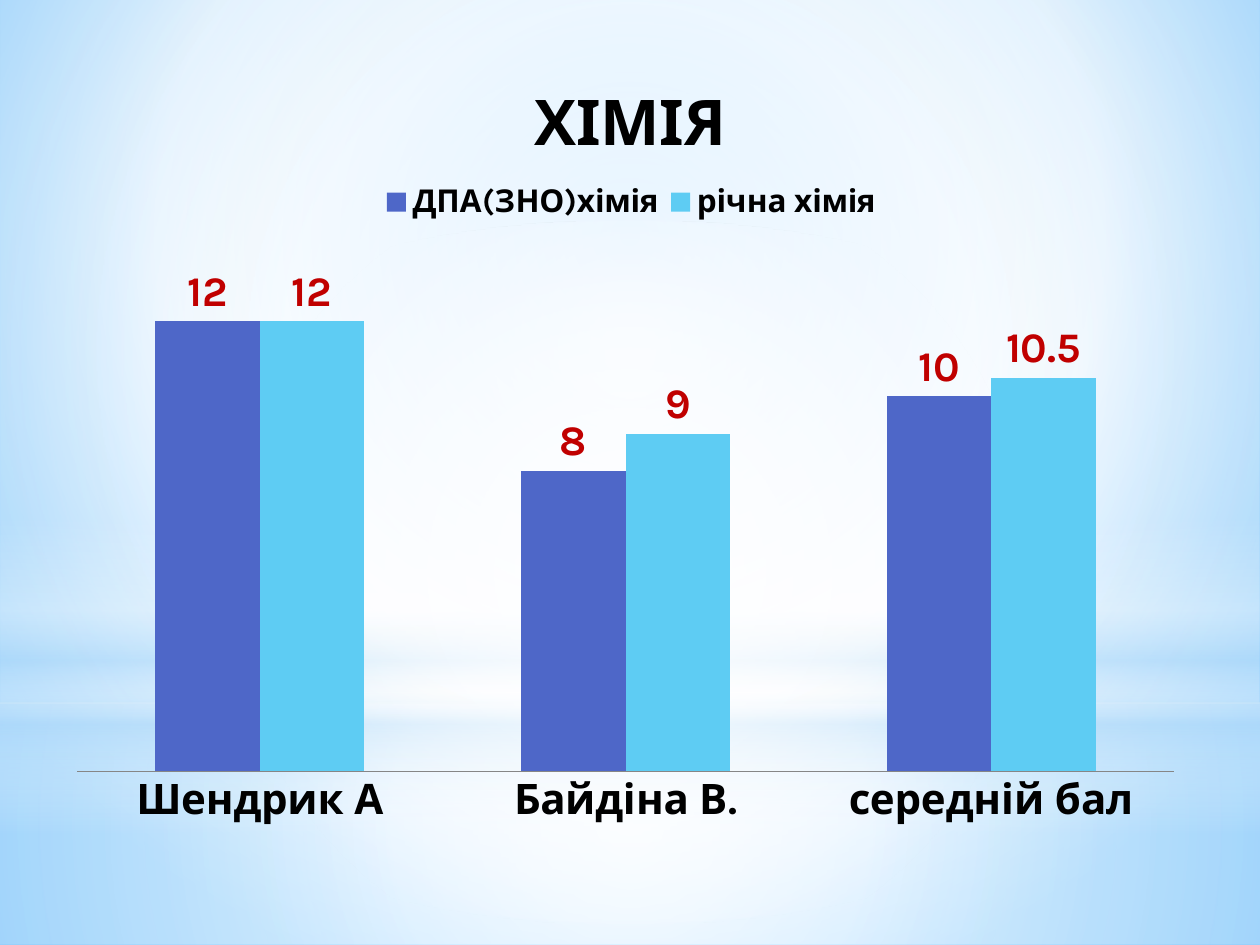
from lxml import etree
from pptx import Presentation
from pptx.chart.data import CategoryChartData
from pptx.dml.color import RGBColor
from pptx.enum import chart as kinds, shapes
from pptx.oxml import parse_xml
from pptx.oxml.ns import nsdecls, qn
from pptx.util import Inches, Pt

BLACK = RGBColor(0, 0, 0)
GRAY = RGBColor(0x86, 0x86, 0x86)
RED = RGBColor(0xC0, 0, 0)
BLUE = RGBColor(0x4E, 0x67, 0xC8)
CYAN = RGBColor(0x5E, 0xCC, 0xF3)
WHITE = RGBColor(255, 255, 255)
PALE = RGBColor(0xB4, 0xDC, 0xFA)
SKY = RGBColor(0x9E, 0xD5, 0xFF)
DEEP = RGBColor(0x5B, 0xB9, 0xFF)
FONT = "Karla"


def shade(node, stops, rect):
    marks = "".join(
        f'<a:gs pos="{pos * 1000}"><a:srgbClr val="{color}">'
        f'<a:alpha val="{alpha * 1000}"/></a:srgbClr></a:gs>'
        for pos, color, alpha in stops)
    if rect:
        sides = " ".join(f'{k}="{v * 1000}"' for k, v in zip("ltrb", rect))
        way = f'<a:path path="circle"><a:fillToRect {sides}/></a:path>'
    else:
        way = '<a:lin ang="5400000" scaled="0"/>'
    old = node.xpath(".//a:solidFill")[0]
    old.getparent().replace(old, parse_xml(
        f'<a:gradFill {nsdecls("a")} rotWithShape="1">'
        f"<a:gsLst>{marks}</a:gsLst>{way}</a:gradFill>"))


def place(node, spot, **vals):
    for old in node.findall(qn("c:layout")):
        node.remove(old)
    box = etree.Element(qn("c:layout"))
    form = etree.SubElement(box, qn("c:manualLayout"))
    for tag, val in vals.items():
        etree.SubElement(form, qn("c:" + tag)).set("val", str(val))
    node.insert(spot, box)


deck = Presentation()
deck.slide_width, deck.slide_height = Inches(10), Inches(7.5)
slide = deck.slides.add_slide(deck.slide_layouts[6])
slide.background.fill.solid()
shade(slide.background._cSld.bg,
      [(0, SKY, 100), (60, WHITE, 100), (100, DEEP, 100)], (20, 10, 20, 60))

RECT, OVAL = shapes.MSO_SHAPE.RECTANGLE, shapes.MSO_SHAPE.OVAL
MID = (50, 50, 50, 50)
glows = [
    (RECT, 5.58, 1.92, MID, [(0, WHITE, 91), (37, WHITE, 76), (100, PALE, 79)]),
    (RECT, 0, 5.58, MID, [(0, WHITE, 89), (48, WHITE, 62), (100, PALE, 79)]),
    (RECT, 4.12, 2.5, None, [(0, WHITE, 0), (29, WHITE, 30), (45, PALE, 40),
                             (55, WHITE, 26), (65, PALE, 60), (100, WHITE, 0)]),
    (OVAL, 1.75, 5.58, MID, [(0, WHITE, 100), (56, WHITE, 0)]),
]
for kind, top, high, rect, stops in glows:
    glow = slide.shapes.add_shape(kind, 0, Inches(top), Inches(10), Inches(high))
    glow.shadow.inherit = False
    glow.line.fill.background()
    glow.fill.solid()
    shade(glow._element.spPr, stops, rect)

data = CategoryChartData()
data.categories = ["Шендрик А", "Байдіна В.", "середній бал"]
data.add_series("ДПА(ЗНО)хімія", (12, 8, 10))
data.add_series("річна хімія", (12, 9, 10.5))
chart = slide.shapes.add_chart(
    kinds.XL_CHART_TYPE.COLUMN_CLUSTERED, Inches(0.43), Inches(0.29),
    Inches(9.07), Inches(6.41), data).chart

chart.has_title = chart.has_legend = True
run = chart.chart_title.text_frame.paragraphs[0].add_run()
run.text = "ХІМІЯ"
chart.legend.position = kinds.XL_LEGEND_POSITION.TOP
chart.legend.include_in_layout = False

base, scale = chart.category_axis, chart.value_axis
base.major_tick_mark = kinds.XL_TICK_MARK.NONE
base.format.line.color.rgb = GRAY
scale.visible = False
scale.has_major_gridlines = False
scale.minimum_scale, scale.maximum_scale = 0, 14

plot = chart.plots[0]
plot.gap_width, plot.overlap = 150, 0
plot.vary_by_categories = False
fonts = [
    (chart.font, 10, False, BLACK),
    (run.font, 36, True, BLACK),
    (chart.legend.font, 18, True, BLACK),
    (base.tick_labels.font, 24, True, BLACK),
]
for bars, color in zip(plot.series, (BLUE, CYAN)):
    bars.format.fill.solid()
    bars.format.fill.fore_color.rgb = color
    bars.invert_if_negative = False
    tags = bars.data_labels
    tags.show_value = True
    tags.position = kinds.XL_LABEL_POSITION.OUTSIDE_END
    fonts.append((tags.font, 24, True, RED))

for font, size, bold, color in fonts:
    for key, val in {"name": FONT, "size": Pt(size), "bold": bold}.items():
        setattr(font, key, val)
    font.color.rgb = color

edge = {"xMode": "edge", "yMode": "edge"}
place(chart._chartSpace.chart.plotArea, 0, layoutTarget="inner", **edge,
      x=0.02, y=0.26, w=0.96, h=0.65)
place(chart.chart_title._element, 1, **edge, x=0.41, y=0.04)
place(chart.legend._element, 1, **edge, x=0.28, y=0.18, w=0.45, h=0.05)

deck.save("out.pptx")
